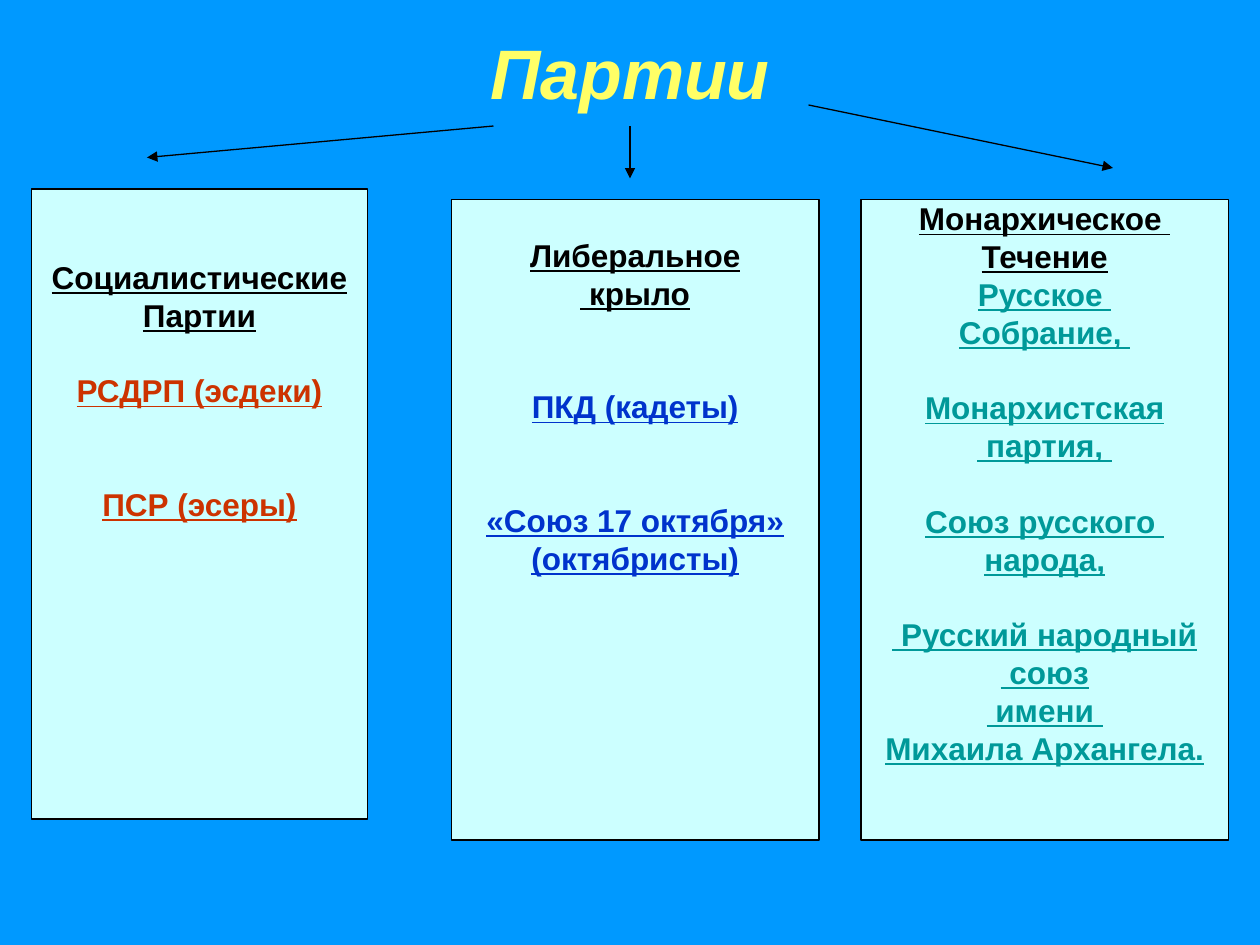
from lxml.etree import SubElement
from pptx import Presentation
from pptx.dml.color import RGBColor
from pptx.enum.shapes import MSO_CONNECTOR, MSO_SHAPE
from pptx.enum.text import MSO_ANCHOR, PP_ALIGN
from pptx.oxml.ns import qn
from pptx.util import Pt


def color(hex_string):
    return RGBColor.from_string(hex_string)


def style_font(font, size, hex_string):
    font.name = "Arial"
    font.size = Pt(size)
    font.bold = True
    font.color.rgb = color(hex_string)


LINE_HEIGHT = 21.6
HEADING_COLOR = "000000"

presentation = Presentation()
presentation.slide_width, presentation.slide_height = Pt(720), Pt(540)
slide = presentation.slides.add_slide(presentation.slide_layouts[5])
slide.background.fill.solid()
slide.background.fill.fore_color.rgb = color("0099FF")

title = slide.shapes.title
title.left, title.top, title.width, title.height = Pt(36), Pt(21.6), Pt(648), Pt(38)
title.text_frame.text = "Партии"
title.text_frame.vertical_anchor = MSO_ANCHOR.MIDDLE
heading = title.text_frame.paragraphs[0]
heading.alignment = PP_ALIGN.CENTER
style_font(heading.font, 40, "FFFF66")
heading.font.italic = True

arrows = [(282, 72, 84, 90), (360, 72, 360, 102), (582, 60, 636, 96)]
arrows[2] = (462, 60, 636, 96)
for ends in arrows:
    arrow = slide.shapes.add_connector(MSO_CONNECTOR.STRAIGHT, *map(Pt, ends))
    arrow.line.color.rgb = color("000000")
    arrow.line.width = Pt(0.75)
    SubElement(arrow.line._get_or_add_ln(), qn("a:tailEnd"), type="triangle")
    SubElement(arrow._element.spPr, qn("a:effectLst"))

# Box, top inset, list colour, heading lines, then groups of (lines of space before, lines)
columns = [
    ((492, 114, 210, 366), 0, "009999", ["Монархическое ", "Течение"], [
        (0, ["Русское ", "Собрание, "]),
        (1, ["Монархистская", " партия, "]),
        (1, ["Союз русского ", "народа,"]),
        (1, [" Русский народный", " союз", " имени ", "Михаила Архангела."]),
    ]),
    ((258, 114, 210, 366), 21, "0033CC", ["Либеральное", " крыло"], [
        (2, ["ПКД (кадеты)"]),
        (2, ["«Союз 17 октября»", "(октябристы)"]),
    ]),
    ((18, 108, 192, 360), 39.5, "CC3300", ["Социалистические", "Партии"], [
        (1, ["РСДРП (эсдеки)"]),
        (2, ["ПСР (эсеры)"]),
    ]),
]
for box, top_inset, list_color, heading_lines, groups in columns:
    column = slide.shapes.add_shape(MSO_SHAPE.RECTANGLE, *map(Pt, box))
    column.shadow.inherit = False
    column.fill.solid()
    column.fill.fore_color.rgb = color("CCFFFF")
    column.line.color.rgb = color("000000")
    column.line.width = Pt(0.75)

    frame = column.text_frame
    frame.word_wrap = False
    frame.vertical_anchor = MSO_ANCHOR.TOP
    frame.margin_top, frame.margin_bottom = Pt(top_inset), 0

    paragraph = frame.paragraphs[0]
    for gap, lines in [(0, heading_lines)] + groups:
        text_color = HEADING_COLOR if lines is heading_lines else list_color
        for index, line in enumerate(lines):
            if paragraph.text:
                paragraph = frame.add_paragraph()
            paragraph.text = line
            paragraph.alignment = PP_ALIGN.CENTER
            paragraph.line_spacing = Pt(LINE_HEIGHT)
            paragraph.space_before = Pt(gap * LINE_HEIGHT if index == 0 else 0)
            style_font(paragraph.font, 18, text_color)
            paragraph.font.underline = True

presentation.save("out.pptx")
